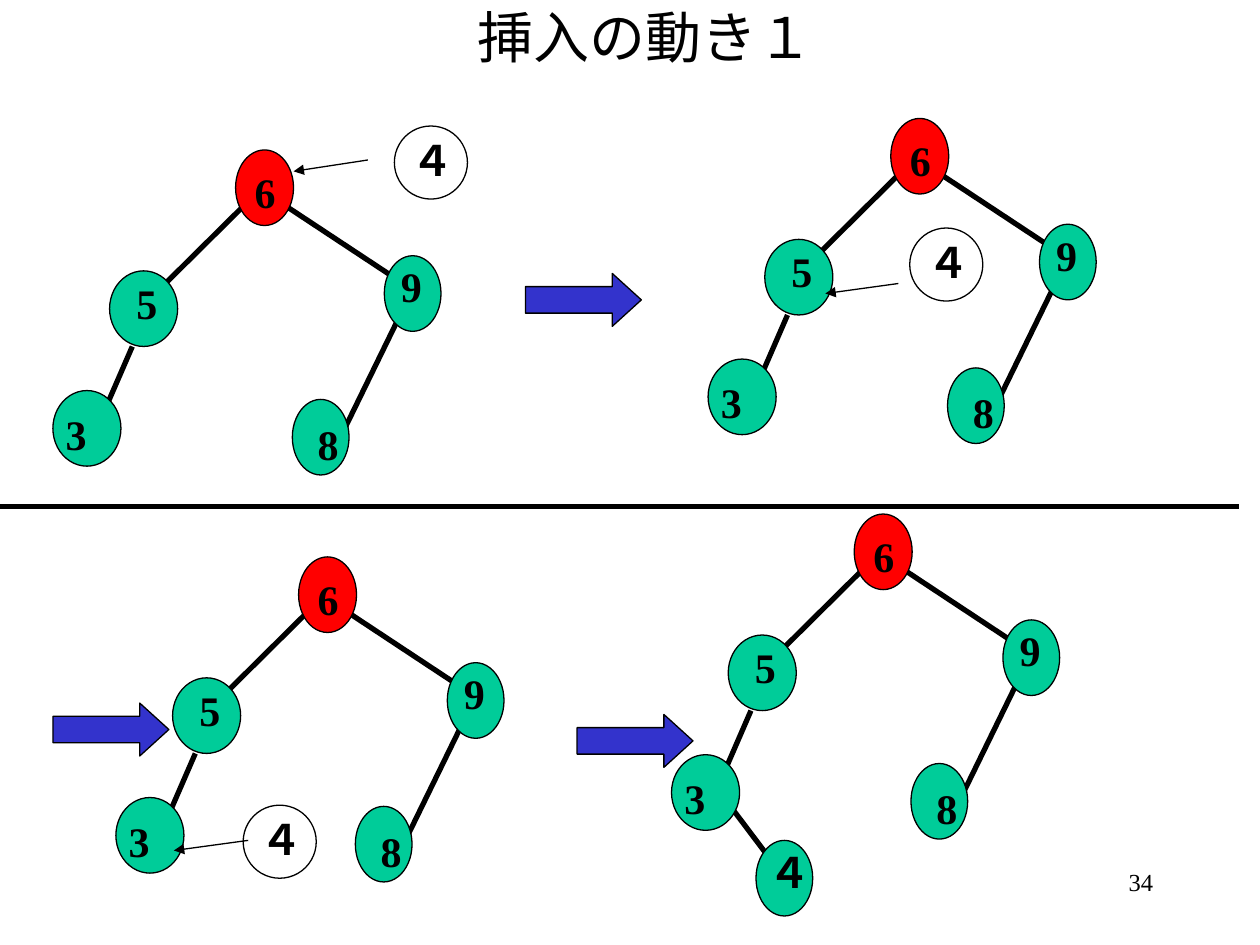
"""Build a slide that follows the insertion of 4 into a binary search tree."""

from typing import NamedTuple, Optional

import pptx
import pptx.dml.color
import pptx.enum.shapes
import pptx.enum.text
import pptx.oxml
import pptx.oxml.ns
import pptx.util

COLUMNS, ROWS = 1000, 750
CELL = pptx.util.Inches(10) // COLUMNS

BLACK = pptx.dml.color.RGBColor(0x00, 0x00, 0x00)
RED = pptx.dml.color.RGBColor(0xFF, 0x00, 0x00)
GREEN = pptx.dml.color.RGBColor(0x00, 0xCC, 0x99)
BLUE = pptx.dml.color.RGBColor(0x33, 0x33, 0xCC)
FONT = "Times New Roman"
THICK, THIN = 3, 0.75

Shapes = pptx.enum.shapes.MSO_SHAPE
Align = pptx.enum.text.PP_ALIGN
Anchor = pptx.enum.text.MSO_ANCHOR


class Box(NamedTuple):
    column: float
    row: float
    width: float
    height: float

    def moved(self, column: float, row: float) -> "Box":
        return self._replace(column=self.column + column, row=self.row + row)

    def lengths(self) -> list:
        return [pptx.util.Emu(int(cells * CELL)) for cells in self]


class Edge(NamedTuple):
    start_column: float
    start_row: float
    end_column: float
    end_row: float


class Node(NamedTuple):
    key: str
    box: Box
    label: Box
    fill: Optional[pptx.dml.color.RGBColor] = GREEN


class Origin(NamedTuple):
    column: float
    row: float


def digit_box(column: float, row: float) -> Box:
    return Box(column, row, 37, 50)


def wide_digit_box(column: float, row: float) -> Box:
    return Box(column, row, 43, 50)


TREE_EDGES = [
    Edge(217, 251, 281, 120),
    Edge(281, 108, 172, 36),
    Edge(63, 132, 172, 24),
    Edge(27, 239, 63, 156),
]
TREE_NODES = [
    Node("6", Box(145, 0, 46, 60), digit_box(150, 8), RED),
    Node("5", Box(45, 96, 54, 60), digit_box(56, 96)),
    Node("9", Box(263, 84, 45, 60), digit_box(266, 83)),
    Node("3", Box(0, 191, 54, 60), digit_box(0, 200)),
    Node("8", Box(190, 198, 45, 60), digit_box(200, 208)),
]
TREE_ORIGINS = [Origin(42, 119), Origin(562, 94), Origin(92, 442), Origin(533, 408)]

NEW_KEY = "４"
WAITING_NODES = [
    Node(NEW_KEY, Box(column, row, 58, 58), wide_digit_box(column + 4, row + 2), None)
    for column, row in [(313, 100), (722, 181), (193, 639)]
]
POINTERS = [
    Edge(292, 127, 233, 136),
    Edge(713, 225, 655, 233),
    Edge(197, 667, 138, 675),
]
INSERTED_NODE = Node(NEW_KEY, Box(600, 667, 45, 60), wide_digit_box(600, 667))
INSERTED_EDGE = Edge(567, 623, 625, 700)
DIVIDER = Edge(0, 402, 983, 402)
STEP_ARROWS = [Box(column, row, 92, 42) for column, row in [(417, 217), (42, 558), (458, 567)]]


def add_text(slide, text: str, box: Box, *, size: float = 24, bold: bool = False,
             align=Align.CENTER, anchor=Anchor.TOP, wrap: bool = True) -> None:
    frame = slide.shapes.add_textbox(*box.lengths()).text_frame
    frame.word_wrap = wrap
    frame.vertical_anchor = anchor
    if not wrap:
        frame.auto_size = pptx.enum.text.MSO_AUTO_SIZE.SHAPE_TO_FIT_TEXT
    paragraph = frame.paragraphs[0]
    paragraph.alignment = align
    run = paragraph.add_run()
    run.text = text
    run.font.name = FONT
    run.font.size = pptx.util.Pt(size)
    run.font.bold = bold
    run.font.color.rgb = BLACK


def add_line(slide, edge: Edge, width: float = THICK, arrow: bool = False) -> None:
    connector = slide.shapes.add_connector(
        pptx.enum.shapes.MSO_CONNECTOR.STRAIGHT,
        *[pptx.util.Emu(int(cells * CELL)) for cells in edge])
    connector.line.color.rgb = BLACK
    connector.line.width = pptx.util.Pt(width)
    properties = connector._element.spPr
    properties.append(pptx.oxml.parse_xml(f"<a:effectLst {pptx.oxml.ns.nsdecls('a')}/>"))
    if arrow:
        connector.line._get_or_add_ln().append(pptx.oxml.parse_xml(
            f"<a:tailEnd {pptx.oxml.ns.nsdecls('a')} type='triangle'/>"))


def add_outlined(slide, preset, box: Box, fill: Optional[pptx.dml.color.RGBColor]):
    shape = slide.shapes.add_shape(preset, *box.lengths())
    shape.shadow.inherit = False
    if fill is None:
        shape.fill.background()
    else:
        shape.fill.solid()
        shape.fill.fore_color.rgb = fill
    shape.line.color.rgb = BLACK
    shape.line.width = pptx.util.Pt(THIN)
    return shape


def add_node(slide, node: Node, origin: Origin = Origin(0, 0)) -> None:
    add_outlined(slide, Shapes.OVAL, node.box.moved(*origin), node.fill)
    add_text(slide, node.key, node.label.moved(*origin), bold=True, wrap=False)


def add_tree(slide, origin: Origin) -> None:
    for edge in TREE_EDGES:
        add_line(slide, Edge(edge.start_column + origin.column, edge.start_row + origin.row,
                             edge.end_column + origin.column, edge.end_row + origin.row))
    for node in TREE_NODES:
        add_node(slide, node, origin)


def add_step_arrow(slide, box: Box) -> None:
    arrow = add_outlined(slide, Shapes.RIGHT_ARROW, box, BLUE)
    arrow.adjustments[0] = 0.5
    arrow.adjustments[1] = 0.55


def main() -> None:
    presentation = pptx.Presentation()
    presentation.slide_width = pptx.util.Emu(COLUMNS * CELL)
    presentation.slide_height = pptx.util.Emu(ROWS * CELL)
    slide = presentation.slides.add_slide(presentation.slide_layouts[6])

    add_text(slide, "34", Box(717, 683, 208, 50), size=14, align=Align.RIGHT)
    add_line(slide, INSERTED_EDGE)
    add_text(slide, "挿入の動き１", Box(275, 0, 475, 58), size=32, anchor=Anchor.MIDDLE)
    add_line(slide, DIVIDER)
    for origin in TREE_ORIGINS:
        add_tree(slide, origin)
    for pointer, node in zip(POINTERS, WAITING_NODES):
        add_line(slide, pointer, THIN, arrow=True)
        add_node(slide, node)
    for box in STEP_ARROWS:
        add_step_arrow(slide, box)
    add_node(slide, INSERTED_NODE)
    presentation.save("out.pptx")


if __name__ == "__main__":
    main()
